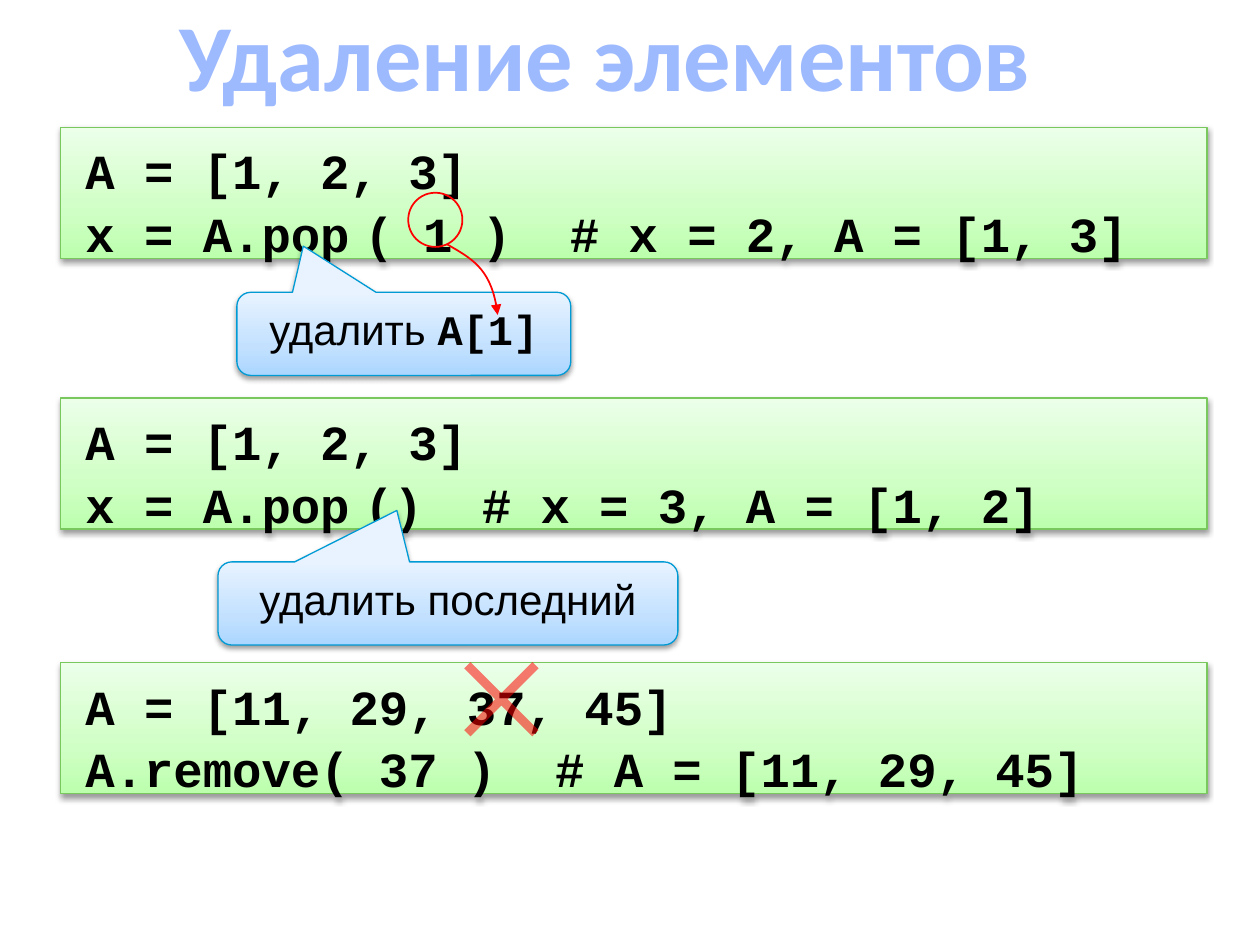
from copy import deepcopy
from dataclasses import dataclass

from lxml import etree
from pptx import Presentation
from pptx.dml.color import RGBColor
from pptx.enum.shapes import MSO_SHAPE
from pptx.enum.text import MSO_ANCHOR, PP_ALIGN
from pptx.oxml.ns import qn
from pptx.util import Inches, Pt

RECT, OVAL = MSO_SHAPE.RECTANGLE, MSO_SHAPE.OVAL
CALLOUT, CROSS = MSO_SHAPE.ROUNDED_RECTANGULAR_CALLOUT, MSO_SHAPE.MATH_MULTIPLY
MIDDLE = MSO_ANCHOR.MIDDLE
CENTER, JUSTIFY = PP_ALIGN.CENTER, PP_ALIGN.JUSTIFY


@dataclass(frozen=True)
class Theme:
    """Colours, fonts and type sizes of the slide."""
    title: str = "9EBAFF"
    text: str = "000000"
    accent: str = "FF0000"
    green: tuple = ("BCFFAD", "CFFFC5", "ECFFE9")
    green_line: str = "78C85D"
    blue: tuple = ("ABD6FF", "C3E1FF", "E8F3FF")
    blue_line: str = "009AD4"
    title_font: str = "Calibri"
    body_font: str = "Arial"
    code_font: str = "Courier New"
    title_size: int = 54
    code_size: int = 28
    note_size: int = 24
    gap_size: int = 14


T = Theme()


def rgb(color):
    """Turn a hex string into a colour."""
    return RGBColor.from_string(color)


def set_font(font, name, size, color, bold=False):
    """Set the typeface, size, colour and weight of a font."""
    font.name, font.size, font.bold = name, Pt(size), bold
    font.color.rgb = rgb(color)


def set_line(sp, color, width):
    """Give a shape a solid outline."""
    sp.line.color.rgb = rgb(color)
    sp.line.width = Pt(width)


def add_panel(s, kind, box, colors, line):
    """Add a shape with a vertical gradient, a thin outline and a soft shadow."""
    sp = s.shapes.add_shape(kind, *map(Inches, box))
    sp.fill.gradient()
    sp.fill.gradient_angle = 90
    stops = sp._element.spPr.find(".//" + qn("a:gsLst"))
    stops.insert(1, deepcopy(stops[0]))
    for stop, position, color in zip(sp.fill.gradient_stops, (0, 0.35, 1), colors):
        stop.position = position
        stop.color.rgb = rgb(color)
    set_line(sp, line, 0.75)
    sp.shadow.inherit = False
    effects = sp._element.spPr.find(qn("a:effectLst"))
    shadow = etree.SubElement(effects, qn("a:outerShdw"), blurRad=str(Pt(3.1)),
                              dist=str(Pt(1.6)), dir="5400000", rotWithShape="0")
    color = etree.SubElement(shadow, qn("a:srgbClr"), val="000000")
    etree.SubElement(color, qn("a:alpha"), val="38000")
    sp.text_frame.vertical_anchor = MIDDLE
    sp.text_frame.word_wrap = True
    return sp


def set_indent(p, left, first):
    """Set the left margin and first-line indent of a paragraph."""
    pPr = p._p.get_or_add_pPr()
    pPr.set("marL", str(Inches(left)))
    pPr.set("indent", str(Inches(first)))


def add_code(s, top, lines):
    """Add a green code box; each line is a list of runs, and a lone space is narrow."""
    sp = add_panel(s, RECT, (0.48, top, 9.1, 1.04), T.green, T.green_line)
    tf = sp.text_frame
    tf.margin_top, tf.margin_bottom = Inches(0.14), 0
    for i, line in enumerate(lines):
        p = tf.add_paragraph() if i else tf.paragraphs[0]
        p.alignment = JUSTIFY
        p.space_before = Pt(2 if i else 0)
        set_indent(p, 0.2, -0.1)
        set_font(p.font, T.code_font, T.code_size, T.text, True)
        for text in line:
            r = p.add_run()
            r.text = text
            if text == " ":
                r.font.size = Pt(T.gap_size)


def add_callout(s, box, tip, text, code=""):
    """Add a blue callout with its tip offset, a note and an optional piece of code."""
    sp = add_panel(s, CALLOUT, box, T.blue, T.blue_line)
    sp.adjustments[0], sp.adjustments[1] = tip
    p = sp.text_frame.paragraphs[0]
    p.alignment, p.line_spacing = CENTER, 0.8
    set_indent(p, 0.2, -0.2)
    set_font(p.font, T.body_font, T.note_size, T.text)
    p.add_run().text = text
    if code:
        r = p.add_run()
        r.text = code
        r.font.name, r.font.bold = T.code_font, True


def add_ring(s, box):
    """Add a red circle without fill."""
    sp = s.shapes.add_shape(OVAL, *map(Inches, box))
    sp.fill.background()
    set_line(sp, T.accent, 1)
    sp.shadow.inherit = False


def add_curved_arrow(s, start, *points):
    """Add a red arrow along one Bézier curve given by its control points."""
    builder = s.shapes.build_freeform(*map(Inches, start), scale=1.0)
    builder.add_line_segments([tuple(map(Inches, pt)) for pt in points], close=False)
    sp = builder.convert_to_shape()
    outline = sp._element.spPr.find(".//" + qn("a:path"))
    segments = outline.findall(qn("a:lnTo"))
    curve = etree.SubElement(outline, qn("a:cubicBezTo"))
    for segment in segments:
        curve.append(segment[0])
        outline.remove(segment)
    sp.fill.background()
    set_line(sp, T.accent, 1)
    etree.SubElement(sp.line._get_or_add_ln(), qn("a:tailEnd"), type="triangle")
    sp.shadow.inherit = False


def add_cross(s, box):
    """Add a translucent red cross."""
    sp = s.shapes.add_shape(CROSS, *map(Inches, box))
    sp.adjustments[0] = 0.067
    sp.fill.solid()
    sp.fill.fore_color.rgb = rgb(T.accent)
    color = sp._element.spPr.find(".//" + qn("a:srgbClr"))
    etree.SubElement(color, qn("a:alpha"), val="53000")
    sp.line.fill.background()
    sp.shadow.inherit = False


def set_title(s, text):
    """Place and format the slide title."""
    sp = s.shapes.title
    sp.left, sp.top, sp.width, sp.height = map(Inches, (0, 0, 9.61, 0.85))
    tf = sp.text_frame
    tf.text = text
    tf.vertical_anchor = MIDDLE
    p = tf.paragraphs[0]
    p.alignment = CENTER
    set_font(p.font, T.title_font, T.title_size, T.title, True)


def main():
    """Build the slide on deleting list elements."""
    prs = Presentation()
    prs.slide_width, prs.slide_height = Inches(10), Inches(7.5)
    s = prs.slides.add_slide(prs.slide_layouts[5])
    set_title(s, "Удаление элементов")

    add_code(s, 1.01, [["A = [1, 2, 3]"],
                       ["x = A.pop", " ", "( 1 )  # x = 2, A = [1, 3]"]])
    add_callout(s, (1.88, 2.32, 2.65, 0.66), (-0.301, -1.056), "удалить ", "A[1]")
    add_ring(s, (3.24, 1.53, 0.43, 0.43))
    add_curved_arrow(s, (3.55, 1.94), (3.74, 2.05), (3.91, 2.14), (3.95, 2.5))

    add_code(s, 3.16, [["A = [1, 2, 3]"],
                       ["x = A.pop", " ", "()  # x = 3, A = [1, 2]"]])
    add_callout(s, (1.73, 4.46, 3.65, 0.66), (-0.111, -1.119), "удалить последний")

    add_code(s, 5.26, [["A = [11, 29, 37, 45]"],
                       ["A.remove( 37 )  # A = [11, 29, 45]"]])
    add_cross(s, (3.46, 5.03, 1.04, 1.04))
    prs.save("out.pptx")


if __name__ == "__main__":
    main()
